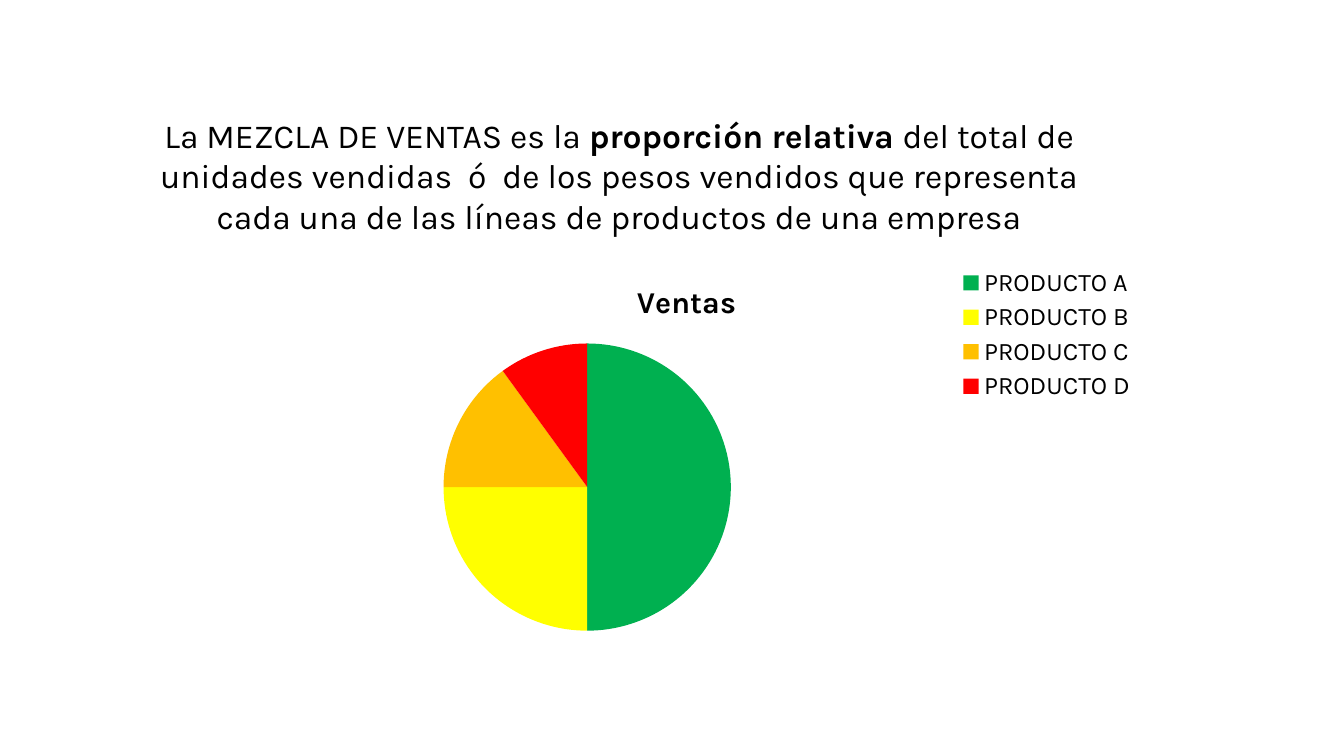
from typing import NamedTuple

from lxml import etree
from pptx import Presentation
from pptx.chart.data import CategoryChartData
from pptx.dml.color import RGBColor
from pptx.enum.chart import XL_CHART_TYPE, XL_LEGEND_POSITION
from pptx.enum.text import MSO_AUTO_SIZE, PP_ALIGN
from pptx.oxml.ns import qn
from pptx.text.text import Font
from pptx.util import Inches, Pt

FONT = "Karla"
BLACK = "000000"


class Product(NamedTuple):
    name: str
    share: int
    color: str


class Phrase(NamedTuple):
    text: str
    bold: bool = False


PRODUCTS = [
    Product("PRODUCTO A", 50, "00B050"),
    Product("PRODUCTO B", 25, "FFFF00"),
    Product("PRODUCTO C", 15, "FFC000"),
    Product("PRODUCTO D", 10, "FF0000"),
]

DEFINITION = [
    Phrase("La MEZCLA DE VENTAS es la "),
    Phrase("proporción relativa ", bold=True),
    Phrase("del total de unidades vendidas  ó  de los pesos vendidos que "
           "representa cada una de las líneas de productos de una empresa"),
]


def rgb(color: str) -> RGBColor:
    return RGBColor.from_string(color)


def style(font: Font, size: float, bold: bool = False) -> None:
    font.name, font.size, font.bold = FONT, Pt(size), bold
    font.color.rgb = rgb(BLACK)


def add_definition(s, phrases: list[Phrase]) -> None:
    sp = s.shapes.add_textbox(Inches(1.29), Inches(1.09), Inches(9.7), Inches(1.31))
    tf = sp.text_frame
    tf.word_wrap = True
    tf.auto_size = MSO_AUTO_SIZE.SHAPE_TO_FIT_TEXT
    p = tf.paragraphs[0]
    p.alignment = PP_ALIGN.CENTER
    for phrase in phrases:
        r = p.add_run()
        r.text = phrase.text
        style(r.font, 24, phrase.bold)


def place_plot(chart, x: float, y: float, w: float, h: float) -> None:
    """Fix the inner plot area, in fractions of the chart frame."""
    plot_area = chart.element.find(".//" + qn("c:plotArea"))
    layout = plot_area.find(qn("c:layout"))
    if layout is None:
        layout = etree.Element(qn("c:layout"))
        plot_area.insert(0, layout)
    manual = etree.SubElement(layout, qn("c:manualLayout"))
    settings = {"layoutTarget": "inner", "xMode": "edge", "yMode": "edge",
                "x": x, "y": y, "w": w, "h": h}
    for tag, value in settings.items():
        etree.SubElement(manual, qn(f"c:{tag}")).set("val", str(value))


def add_sales_pie(s, products: list[Product]) -> None:
    data = CategoryChartData()
    data.categories = [product.name for product in products]
    data.add_series("Ventas", [product.share for product in products])
    chart = s.shapes.add_chart(
        XL_CHART_TYPE.PIE, Inches(2.33), Inches(2.61), Inches(8.96), Inches(3.8), data
    ).chart
    style(chart.font, 18)

    # Title and legend
    chart.has_title = True
    tf = chart.chart_title.text_frame
    tf.text = "Ventas"
    style(tf.paragraphs[0].runs[0].font, 21.6, bold=True)
    chart.has_legend = True
    chart.legend.position = XL_LEGEND_POSITION.CORNER
    chart.legend.include_in_layout = False
    style(chart.legend.font, 18)

    # Slices
    plot = chart.plots[0]
    plot.vary_by_categories = True
    for i, product in enumerate(products):
        fill = plot.series[0].points[i].format.fill
        fill.solid()
        fill.fore_color.rgb = rgb(product.color)
    place_plot(chart, 0.23, 0.21, 0.32, 0.75)


def main() -> None:
    prs = Presentation()
    prs.slide_width, prs.slide_height = Inches(13.33), Inches(7.5)
    s = prs.slides.add_slide(prs.slide_layouts.get_by_name("Blank"))
    add_definition(s, DEFINITION)
    add_sales_pie(s, PRODUCTS)
    prs.save("out.pptx")


if __name__ == "__main__":
    main()
